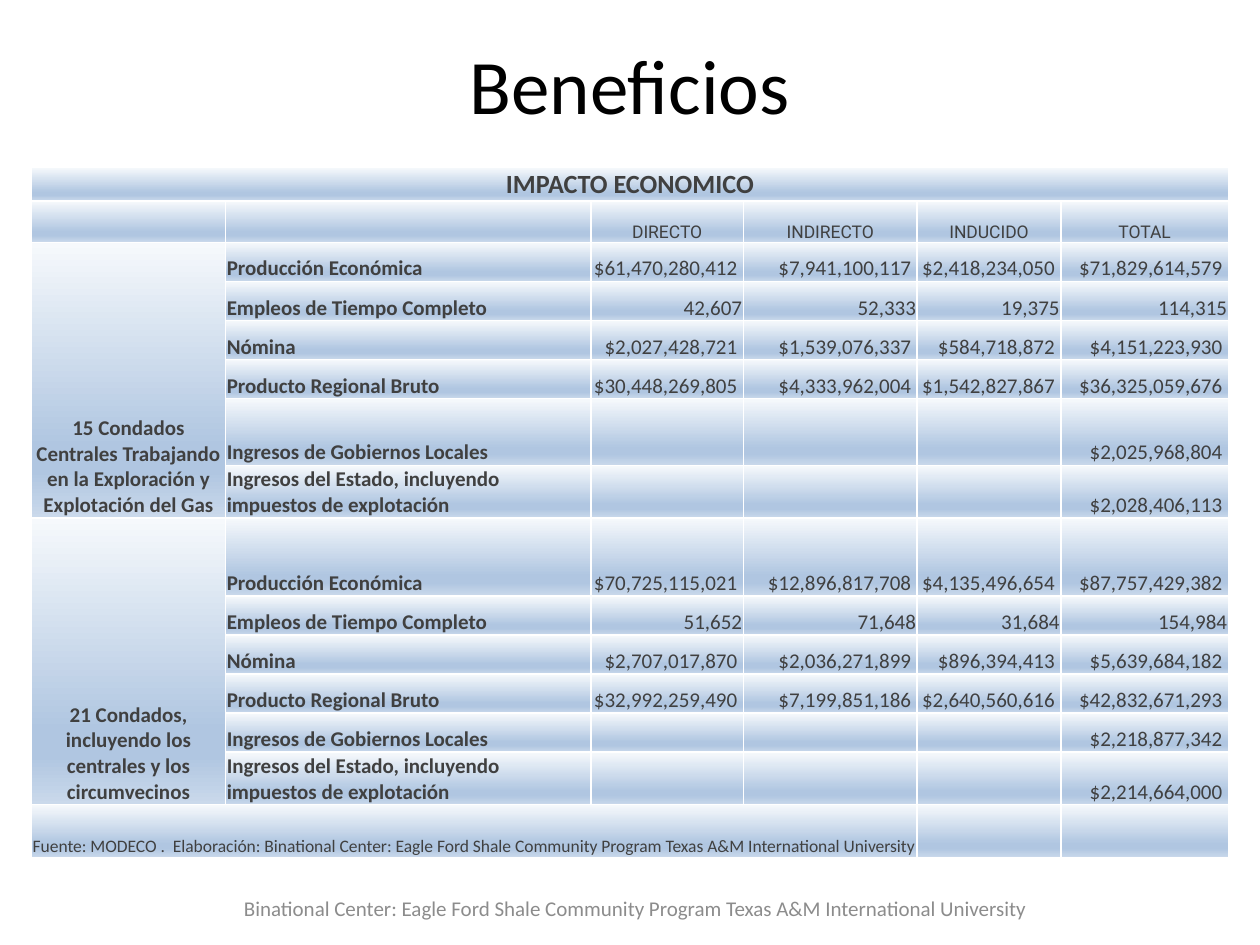
from lxml import etree
from pptx import Presentation
from pptx.dml.color import RGBColor
from pptx.enum.text import MSO_ANCHOR, PP_ALIGN
from pptx.oxml.ns import qn
from pptx.util import Inches, Pt

LEFT, CENTER, RIGHT = PP_ALIGN.LEFT, PP_ALIGN.CENTER, PP_ALIGN.RIGHT
BOTTOM, MIDDLE = MSO_ANCHOR.BOTTOM, MSO_ANCHOR.MIDDLE

BLACK = RGBColor(0x00, 0x00, 0x00)
DARK_GRAY = RGBColor(0x40, 0x40, 0x40)
FOOTER_GRAY = RGBColor(0x8C, 0x8C, 0x8C)
WHITE = RGBColor(0xFF, 0xFF, 0xFF)
CELL_GRADIENT = [
    (0, RGBColor(0xF6, 0xF9, 0xFC)),
    (74, RGBColor(0xB0, 0xC6, 0xE1)),
    (83, RGBColor(0xB0, 0xC6, 0xE1)),
    (100, RGBColor(0xCA, 0xD9, 0xEB)),
]

TITLE = "Beneficios"
PROGRAM = ("Binational Center: Eagle Ford Shale Community Program "
           "Texas A&M International University")
TABLE_TITLE = "IMPACTO ECONOMICO"
SOURCE = "Fuente: MODECO .  Elaboración: " + PROGRAM
EFFECTS = ["DIRECTO", "INDIRECTO", "INDUCIDO", "TOTAL"]
INDICATORS = [
    "Producción Económica",
    "Empleos de Tiempo Completo",
    "Nómina",
    "Producto Regional Bruto",
    "Ingresos de Gobiernos Locales",
    "Ingresos del Estado, incluyendo impuestos de explotación",
]
REGIONS = {
    "15 Condados Centrales Trabajando en la Exploración y Explotación del Gas": [
        ("$61,470,280,412", "$7,941,100,117", "$2,418,234,050", "$71,829,614,579"),
        ("42,607", "52,333", "19,375", "114,315"),
        ("$2,027,428,721", "$1,539,076,337", "$584,718,872", "$4,151,223,930"),
        ("$30,448,269,805", "$4,333,962,004", "$1,542,827,867", "$36,325,059,676"),
        ("", "", "", "$2,025,968,804"),
        ("", "", "", "$2,028,406,113"),
    ],
    "21 Condados, incluyendo los centrales y los circumvecinos": [
        ("$70,725,115,021", "$12,896,817,708", "$4,135,496,654", "$87,757,429,382"),
        ("51,652", "71,648", "31,684", "154,984"),
        ("$2,707,017,870", "$2,036,271,899", "$896,394,413", "$5,639,684,182"),
        ("$32,992,259,490", "$7,199,851,186", "$2,640,560,616", "$42,832,671,293"),
        ("", "", "", "$2,218,877,342"),
        ("", "", "", "$2,214,664,000"),
    ],
}

COLUMN_WIDTHS = [1.54, 2.9, 1.21, 1.38, 1.14, 1.33]
ROW_HEIGHTS = [0.23, 0.33,
               0.31, 0.31, 0.31, 0.31, 0.53, 0.35,
               0.62, 0.31, 0.31, 0.31, 0.31, 0.35,
               0.42]
FIRST_REGION_ROW = 2
FIRST_VALUE_COLUMN = 2
CELL_FORMAT = {
    "margin_left": Inches(0.01),
    "margin_right": Inches(0.01),
    "margin_top": Inches(0.01),
    "margin_bottom": 0,
    "vertical_anchor": BOTTOM,
}


def write(paragraph, text, size, color, align, bold=False, font="Calibri"):
    paragraph.alignment = align
    run = paragraph.add_run()
    run.text = text
    for name, value in {"size": Pt(size), "bold": bold, "name": font}.items():
        setattr(run.font, name, value)
    run.font.color.rgb = color


def add_color(parent, color):
    etree.SubElement(parent, qn("a:srgbClr"), val=str(color))


def style_cell(cell):
    """Set insets, white borders and the gradient, and keep empty text small."""
    for name, value in CELL_FORMAT.items():
        setattr(cell, name, value)
    properties = cell._tc.get_or_add_tcPr()
    for side in ("a:lnL", "a:lnR", "a:lnT", "a:lnB"):
        border = etree.SubElement(properties, qn(side), w=str(Pt(1)))
        add_color(etree.SubElement(border, qn("a:solidFill")), WHITE)
    gradient = etree.SubElement(properties, qn("a:gradFill"), rotWithShape="1")
    stops = etree.SubElement(gradient, qn("a:gsLst"))
    for percent, color in CELL_GRADIENT:
        add_color(etree.SubElement(stops, qn("a:gs"), pos=str(percent * 1000)), color)
    etree.SubElement(gradient, qn("a:lin"), ang=str(90 * 60000), scaled="0")
    paragraph = cell.text_frame.paragraphs[0]._p
    etree.SubElement(paragraph, qn("a:endParaRPr"), sz="1000")


def add_impact_table(slide):
    table = slide.shapes.add_table(
        len(ROW_HEIGHTS), len(COLUMN_WIDTHS), Inches(0.25), Inches(1.33),
        Inches(sum(COLUMN_WIDTHS)), Inches(sum(ROW_HEIGHTS))).table
    table.first_row = table.horz_banding = False
    for column, width in zip(table.columns, COLUMN_WIDTHS):
        column.width = Inches(width)
    for row, height in zip(table.rows, ROW_HEIGHTS):
        row.height = Inches(height)

    def fill_in(row, column, text, align, size=12, **style):
        write(table.cell(row, column).text_frame.paragraphs[0],
              text, size, DARK_GRAY, align, **style)

    last_row, last_column = len(ROW_HEIGHTS) - 1, len(COLUMN_WIDTHS) - 1
    table.cell(0, 0).merge(table.cell(0, last_column))
    fill_in(0, 0, TABLE_TITLE, CENTER, size=15, bold=True)
    for column, effect in enumerate(EFFECTS, FIRST_VALUE_COLUMN):
        fill_in(1, column, effect, CENTER, size=10, font="Roboto")

    for index, (region, figures) in enumerate(REGIONS.items()):
        top = FIRST_REGION_ROW + index * len(INDICATORS)
        table.cell(top, 0).merge(table.cell(top + len(INDICATORS) - 1, 0))
        fill_in(top, 0, region, CENTER, bold=True)
        for row, (indicator, values) in enumerate(zip(INDICATORS, figures), top):
            fill_in(row, 1, indicator, LEFT, bold=True)
            for column, value in enumerate(values, FIRST_VALUE_COLUMN):
                if value:
                    # Currency amounts end in a space, as in accounting format.
                    amount = value + " " if value.startswith("$") else value
                    fill_in(row, column, amount, RIGHT)

    table.cell(last_row, 0).merge(table.cell(last_row, 3))
    fill_in(last_row, 0, SOURCE, LEFT, size=10)
    for cell in table.iter_cells():
        style_cell(cell)


def main():
    presentation = Presentation()
    presentation.slide_width, presentation.slide_height = Inches(10), Inches(7.5)
    slide = presentation.slides.add_slide(presentation.slide_layouts[5])

    title = slide.shapes.title
    title.left, title.top = Inches(0.5), Inches(0.25)
    title.width, title.height = Inches(9), Inches(0.83)
    title.text_frame.vertical_anchor = MIDDLE
    write(title.text_frame.paragraphs[0], TITLE, 44, BLACK, CENTER)

    add_impact_table(slide)

    footer = slide.shapes.add_textbox(
        Inches(1.58), Inches(7), Inches(6.67), Inches(0.42)).text_frame
    footer.word_wrap = True
    footer.vertical_anchor = MIDDLE
    write(footer.paragraphs[0], PROGRAM, 12, FOOTER_GRAY, RIGHT)

    presentation.save("out.pptx")


if __name__ == "__main__":
    main()
